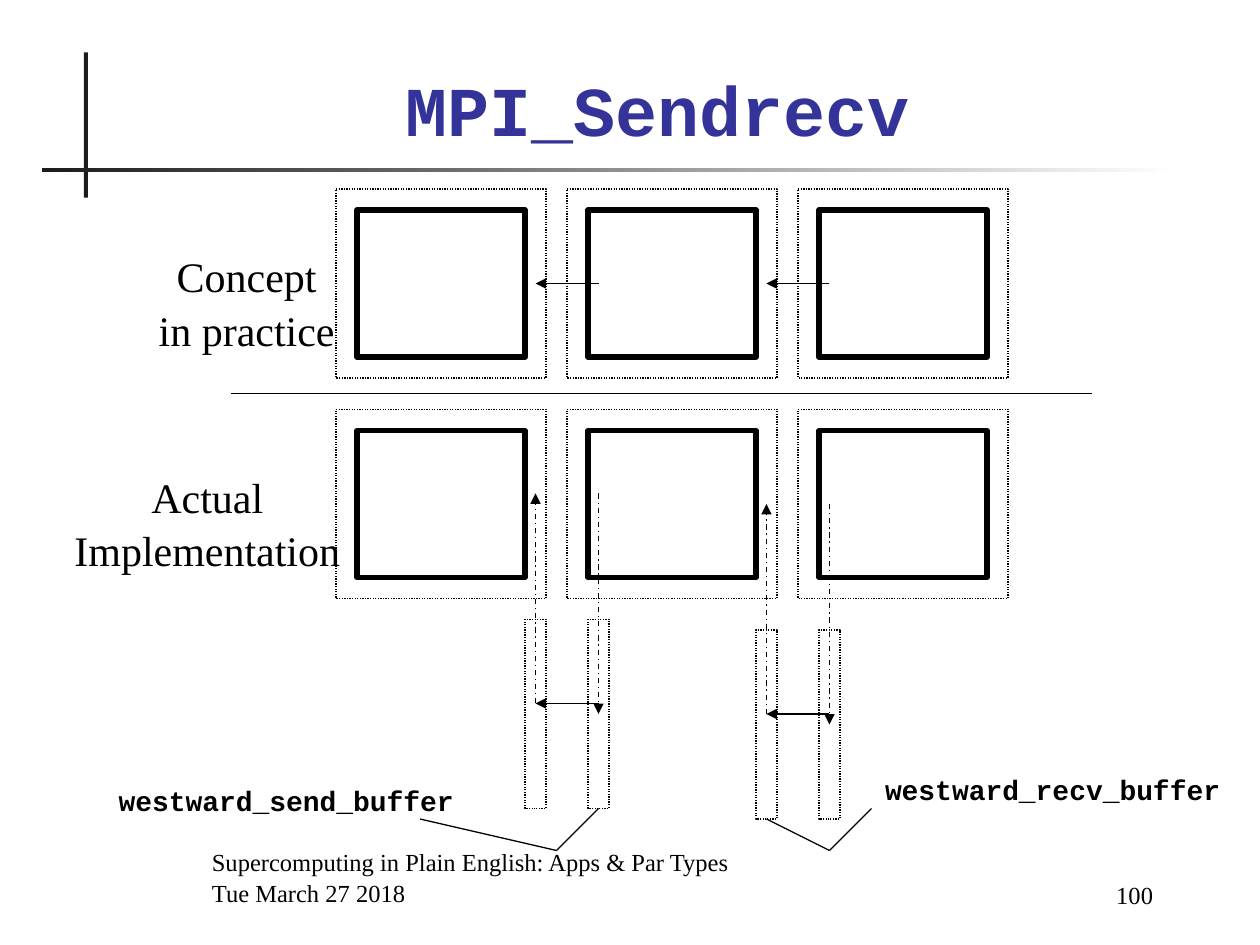
from typing import NamedTuple, Optional

from lxml import etree
from pptx import Presentation
from pptx.dml.color import RGBColor
from pptx.enum.dml import MSO_LINE
from pptx.enum.shapes import MSO_CONNECTOR, MSO_SHAPE
from pptx.enum.text import MSO_ANCHOR, PP_ALIGN
from pptx.oxml.ns import qn
from pptx.util import Pt

COLOURS = {"ink": "000000", "bar": "1C1C1C", "paper": "FFFFFF", "title": "333399"}
SERIF, MONO = "Times New Roman", "Courier New"
LEFT, CENTER, RIGHT = PP_ALIGN.LEFT, PP_ALIGN.CENTER, PP_ALIGN.RIGHT
TOP, BOTTOM = MSO_ANCHOR.TOP, MSO_ANCHOR.BOTTOM
DOTTED, DASH_DOT = MSO_LINE.ROUND_DOT, MSO_LINE.DASH_DOT
BOTTOM_SITE = 2

DOMAIN_LEFT, DOMAIN_STEP, DOMAIN_COUNT = 192, 132, 3
CONCEPT_TOP, ACTUAL_TOP = 108, 234
HALO_WIDTH, HALO_HEIGHT, HALO_MARGIN = 120, 108, 12
BUFFER_WIDTH, BUFFER_HEIGHT, BUFFER_GAP = 12, 108, 36


class Label(NamedTuple):
    lines: list[str]
    left: float
    top: float
    width: float
    height: float
    size: float
    font: str = SERIF
    align: PP_ALIGN = CENTER
    anchor: MSO_ANCHOR = TOP
    bold: bool = False
    colour: str = "ink"
    wrap: bool = False
    spacing: float = 1.0


class Exchange(NamedTuple):
    """A pair of buffers and the height at which data enters and leaves them."""
    left: float
    top: float


LABELS = [
    Label(["100"], 564, 487.5, 102, 36, 14, align=RIGHT, anchor=BOTTOM, wrap=True),
    Label(["MPI_Sendrecv"], 60, 36, 631, 53.5, 40, MONO, anchor=BOTTOM, bold=True,
          colour="title", wrap=True),
    Label(["Concept", "in practice"], 83, 138, 116, 65.5, 24, spacing=1.06),
    Label(["Actual", "Implementation"], 34.5, 264, 168, 65.5, 24, spacing=1.06),
    Label(["westward_send_buffer"], 60, 444, 207, 26.5, 16, MONO, bold=True),
    Label(["westward_recv_buffer"], 498, 438, 207, 26.5, 16, MONO, bold=True),
    Label(["Supercomputing in Plain English: Apps & Par Types", "Tue March 27 2018"],
          114, 486, 438, 36, 14, align=LEFT, anchor=BOTTOM, wrap=True, spacing=1.06),
]
EXCHANGES = [Exchange(300, 354), Exchange(432, 360)]


def rgb(name: str) -> RGBColor:
    return RGBColor.from_string(COLOURS[name])


def add_bar(page, left: float, top: float, width: float, height: float):
    bar = page.shapes.add_shape(MSO_SHAPE.RECTANGLE, Pt(left), Pt(top), Pt(width), Pt(height))
    bar.shadow.inherit = False
    bar.line.fill.background()
    bar.fill.solid()
    bar.fill.fore_color.rgb = rgb("bar")
    return bar


def add_outline(page, left: float, top: float, width: float, height: float,
                weight: float = 0.75, dash: Optional[MSO_LINE] = None):
    box = page.shapes.add_shape(MSO_SHAPE.RECTANGLE, Pt(left), Pt(top), Pt(width), Pt(height))
    box.shadow.inherit = False
    box.fill.background()
    box.line.color.rgb = rgb("ink")
    box.line.width = Pt(weight)
    if dash:
        box.line.dash_style = dash
    return box


def add_line(page, start: tuple[float, float], end: tuple[float, float],
             arrow: bool = False, dash: Optional[MSO_LINE] = None):
    line = page.shapes.add_connector(MSO_CONNECTOR.STRAIGHT, *map(Pt, start + end))
    line.line.color.rgb = rgb("ink")
    line.line.width = Pt(0.75)
    if dash:
        line.line.dash_style = dash
    if arrow:
        etree.SubElement(line.line._get_or_add_ln(), qn("a:tailEnd"), type="triangle")
    etree.SubElement(line._element.spPr, qn("a:effectLst"))
    return line


def add_label(page, label: Label) -> None:
    box = page.shapes.add_textbox(Pt(label.left), Pt(label.top), Pt(label.width), Pt(label.height))
    frame = box.text_frame
    frame.word_wrap = label.wrap
    frame.vertical_anchor = label.anchor
    frame.text = "\n".join(label.lines)
    for para in frame.paragraphs:
        para.alignment = label.align
        para.line_spacing = label.spacing
        para.font.name = label.font
        para.font.size = Pt(label.size)
        para.font.bold = label.bold
        para.font.color.rgb = rgb(label.colour)


def add_domain_row(page, top: float) -> None:
    """Draw solid subdomains, each inside its dotted ghost zone."""
    for index in range(DOMAIN_COUNT):
        left = DOMAIN_LEFT + index * DOMAIN_STEP
        add_outline(page, left + HALO_MARGIN, top + HALO_MARGIN,
                    HALO_WIDTH - 2 * HALO_MARGIN, HALO_HEIGHT - 2 * HALO_MARGIN, 3)
        add_outline(page, left, top, HALO_WIDTH, HALO_HEIGHT, dash=DOTTED)


def add_exchange(page, exchange: Exchange) -> list:
    """Draw both buffers with their arrows; return the buffers, west one first."""
    top = exchange.top
    buffers = [add_outline(page, exchange.left + offset, top, BUFFER_WIDTH, BUFFER_HEIGHT,
                           dash=DOTTED) for offset in (0, BUFFER_GAP)]
    west = exchange.left + BUFFER_WIDTH / 2
    east = west + BUFFER_GAP
    add_line(page, (west, top + 48), (west, top - 72), True, DASH_DOT)
    add_line(page, (east, top - 72), (east, top + 54), True, DASH_DOT)
    add_line(page, (east, top + 48), (west, top + 48), True)
    return buffers


def add_pointer(page, label_end: tuple[float, float], elbow: tuple[float, float], buffer) -> None:
    """Lead from a label through an elbow to the bottom of a buffer."""
    add_line(page, label_end, elbow)
    add_line(page, elbow, elbow).end_connect(buffer, BOTTOM_SITE)


def main() -> None:
    deck = Presentation()
    deck.slide_width, deck.slide_height = Pt(720), Pt(540)
    page = deck.slides.add_slide(deck.slide_layouts[6])

    add_bar(page, 48, 30, 2.25, 83)
    rule = add_bar(page, 24, 96, 648, 2.25)
    rule.fill.gradient()
    rule.fill.gradient_angle = 0
    for stop, name in zip(rule.fill.gradient_stops, ("bar", "paper")):
        stop.color.rgb = rgb(name)

    for top in (CONCEPT_TOP, ACTUAL_TOP):
        add_domain_row(page, top)
    for east in (342, 474):
        add_line(page, (east, 162), (east - BUFFER_GAP, 162), True)
    add_line(page, (132, 225), (624, 225))

    send_pair, recv_pair = [add_exchange(page, exchange) for exchange in EXCHANGES]
    add_pointer(page, (240, 468), (318, 486), send_pair[1])
    add_pointer(page, (498, 462), (474, 486), recv_pair[0])

    for label in LABELS:
        add_label(page, label)
    deck.save("out.pptx")


if __name__ == "__main__":
    main()
